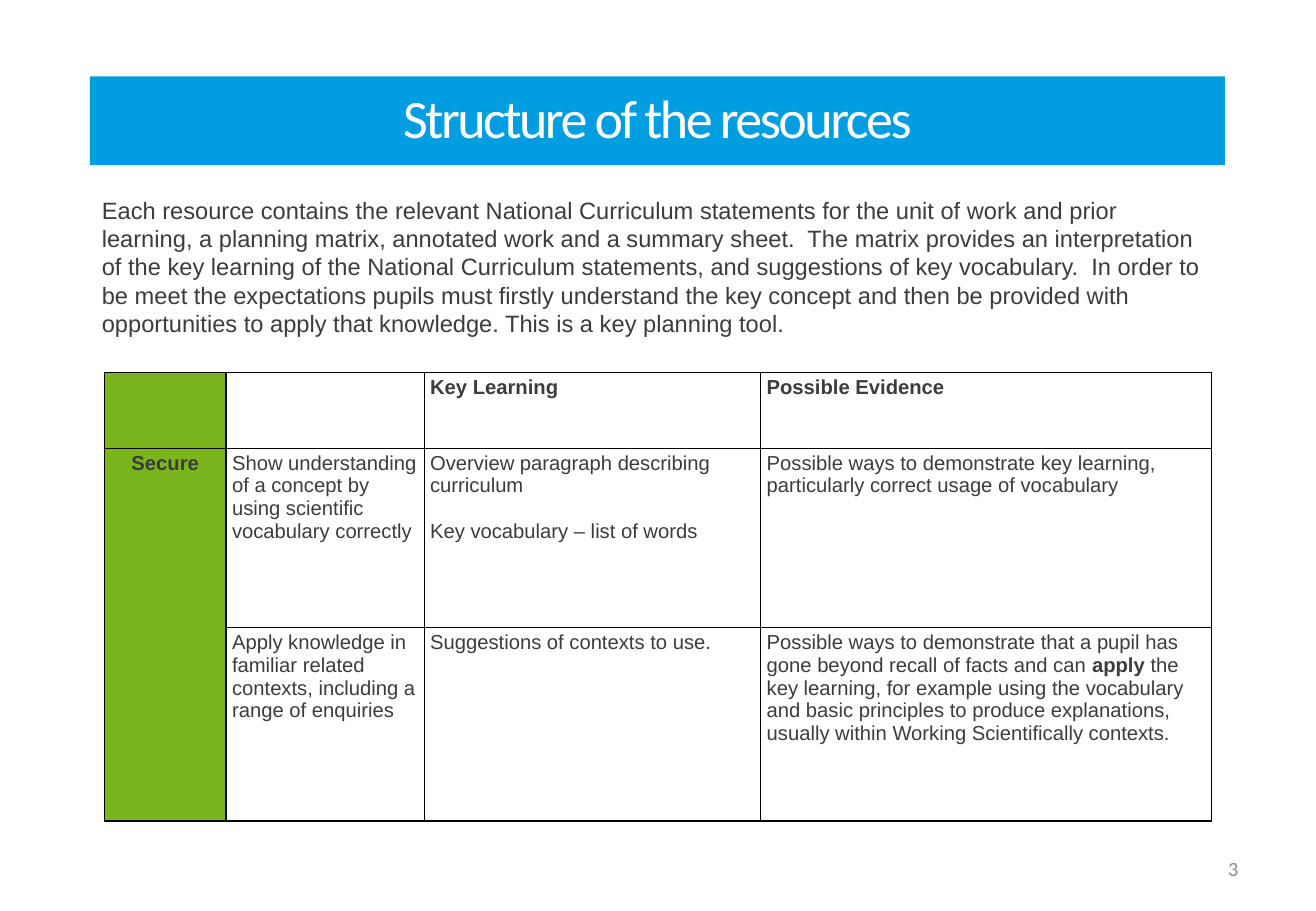
from lxml.etree import SubElement
from pptx import Presentation
from pptx.dml.color import RGBColor
from pptx.enum.shapes import MSO_SHAPE
from pptx.enum.text import MSO_ANCHOR, PP_ALIGN
from pptx.oxml.ns import qn
from pptx.util import Inches, Pt

COLOURS = {
    "banner": "009EE0",
    "green": "7AB51D",
    "ink": "3C3C3C",
    "number": "8C8C8C",
    "white": "FFFFFF",
    "border": "000000",
}

INTRODUCTION = (
    "Each resource contains the relevant National Curriculum statements for the unit of work "
    "and prior learning, a planning matrix, annotated work and a summary sheet. "
    " The matrix provides an interpretation of the key learning of the National Curriculum "
    "statements, and suggestions of key vocabulary.  In order to be meet the expectations pupils "
    "must firstly understand the key concept and then be provided with opportunities to apply "
    "that knowledge. This is a key planning tool."
)

COLUMN_WIDTHS = [1, 1.63, 2.77, 3.71]
ROW_HEIGHTS = [0.62, 1.48, 1.59]
BOLD = {"bold": True}
MATRIX = [
    [[], [], [[("Key Learning", BOLD)]], [[("Possible Evidence", BOLD)]]],
    [
        [[("Secure", BOLD)]],
        [[("Show understanding of a concept by using scientific vocabulary correctly", {})]],
        [
            [("Overview paragraph describing curriculum", {})],
            [("Key vocabulary – list of words", {})],
        ],
        [[("Possible ways to demonstrate key learning, "
           "particularly correct usage of vocabulary", {})]],
    ],
    [
        [],
        [[("Apply knowledge in familiar related contexts, including a range of enquiries", {})]],
        [[("Suggestions of contexts to use.", {})]],
        [[
            ("Possible ways to demonstrate that a pupil has gone beyond recall of facts and can ", {}),
            ("apply", BOLD),
            (" the key learning, for example using the vocabulary and basic principles to produce "
             "explanations, usually within Working Scientifically contexts.", {}),
        ]],
    ],
]


def apply_format(target, values):
    for name, value in values.items():
        setattr(target, name, value)


def paint(fill, colour):
    fill.solid()
    fill.fore_color.rgb = RGBColor.from_string(COLOURS[colour])


def add_span(para, text, size, colour="ink", font="Arial", **extra):
    span = para.add_run()
    span.text = text
    apply_format(span.font, {"name": font, "size": Pt(size), **extra})
    span.font.color.rgb = RGBColor.from_string(COLOURS[colour])
    return span


def add_text(page, place, text, size, align, anchor, **style):
    box = page.shapes.add_textbox(*map(Inches, place))
    apply_format(box.text_frame, {"word_wrap": True, "vertical_anchor": anchor})
    para = box.text_frame.paragraphs[0]
    para.alignment = align
    add_span(para, text, size, **style)


def add_banner(page, place, text):
    banner = page.shapes.add_shape(MSO_SHAPE.RECTANGLE, *map(Inches, place))
    banner.shadow.inherit = False
    paint(banner.fill, "banner")
    banner.line.fill.background()
    banner.text_frame.vertical_anchor = MSO_ANCHOR.MIDDLE
    para = banner.text_frame.paragraphs[0]
    apply_format(para, {"alignment": PP_ALIGN.CENTER, "line_spacing": 0.9})
    span = add_span(para, text, 32, "white", "Calibri")
    span.font._element.set("spc", "-150")


def add_borders(cell):
    properties = cell._tc.get_or_add_tcPr()
    for side in ("lnL", "lnR", "lnT", "lnB"):
        line = SubElement(properties, qn(f"a:{side}"), w=str(Pt(0.75)))
        fill = SubElement(line, qn("a:solidFill"))
        SubElement(fill, qn("a:srgbClr"), val=COLOURS["border"])


def fill_cell(cell, paragraphs, is_label):
    margins = {"margin_left": 0.05, "margin_right": 0.05, "margin_top": 0.03, "margin_bottom": 0.03}
    apply_format(cell, {name: Inches(value) for name, value in margins.items()})
    add_borders(cell)
    if is_label:
        paint(cell.fill, "green")
    else:
        cell.fill.background()
    for index, spans in enumerate(paragraphs):
        para = cell.text_frame.add_paragraph() if index else cell.text_frame.paragraphs[0]
        para.alignment = PP_ALIGN.CENTER if is_label else PP_ALIGN.LEFT
        if index:
            para.space_before = Pt(13.5)
        for text, extra in spans:
            add_span(para, text, 12, **{"bold": False, **extra})


def add_matrix(page, left, top):
    size = (sum(COLUMN_WIDTHS), sum(ROW_HEIGHTS))
    frame = page.shapes.add_table(
        len(ROW_HEIGHTS), len(COLUMN_WIDTHS), *map(Inches, (left, top, *size))
    )
    table = frame.table
    apply_format(table, {"first_row": False, "horz_banding": False})
    for column, width in zip(table.columns, COLUMN_WIDTHS):
        column.width = Inches(width)
    for row, height in zip(table.rows, ROW_HEIGHTS):
        row.height = Inches(height)
    for row_index, row in enumerate(MATRIX):
        for column_index, paragraphs in enumerate(row):
            fill_cell(table.cell(row_index, column_index), paragraphs, column_index == 0)
    table.cell(1, 0).merge(table.cell(2, 0))


def main():
    deck = Presentation()
    apply_format(deck, {"slide_width": Inches(10.83), "slide_height": Inches(7.5)})
    page = deck.slides.add_slide(deck.slide_layouts[6])
    add_matrix(page, 0.86, 3.07)
    add_text(page, (0.74, 1.56, 9.34, 1.51), INTRODUCTION, 14, PP_ALIGN.LEFT, MSO_ANCHOR.TOP)
    add_text(page, (7.76, 6.95, 2.53, 0.4), "3", 12, PP_ALIGN.RIGHT, MSO_ANCHOR.MIDDLE,
             colour="number", font="Calibri")
    add_banner(page, (0.74, 0.63, 9.34, 0.73), "Structure of the resources")
    deck.save("out.pptx")


if __name__ == "__main__":
    main()
